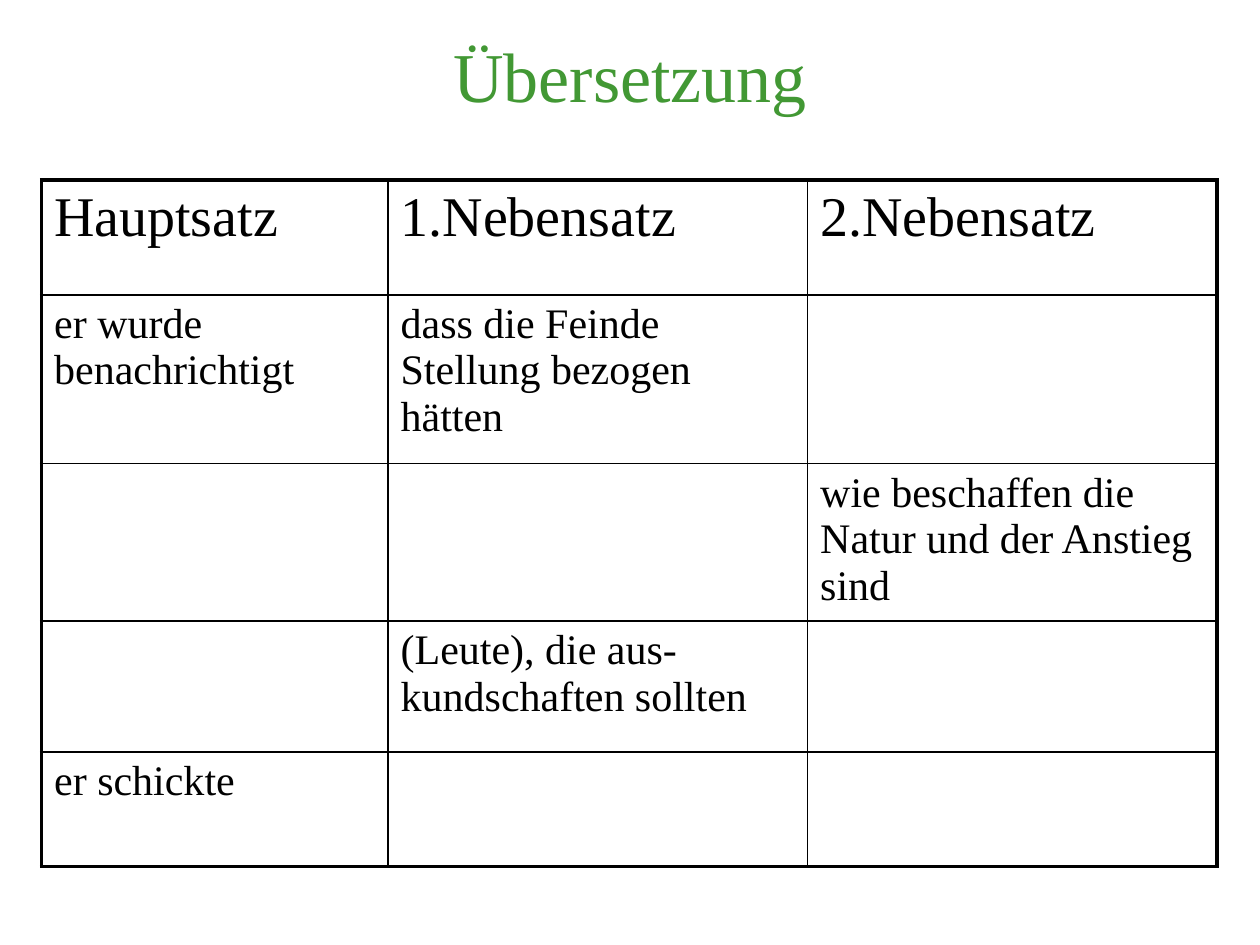
from dataclasses import dataclass

from lxml.etree import SubElement
from pptx import Presentation
from pptx.dml.color import RGBColor
from pptx.enum.text import MSO_ANCHOR, PP_ALIGN
from pptx.oxml.ns import qn
from pptx.util import Inches, Pt

FONT = "Times New Roman"
COLORS = {"title": "429834", "text": "000000", "border": "000000"}
OUTER_BORDER, INNER_BORDER = 2.25, 1
COLUMN_WIDTHS = [2.75, 3.33, 3.25]


@dataclass
class ClauseRow:
    height: float
    size: int
    texts: tuple[str, str, str]


ROWS = [
    ClauseRow(0.91, 32, ("Hauptsatz", "1.Nebensatz", "2.Nebensatz")),
    ClauseRow(1.34, 24, ("er wurde benachrichtigt", "dass die Feinde Stellung bezogen hätten", "")),
    ClauseRow(1.25, 24, ("", "", "wie beschaffen die Natur und der Anstieg sind")),
    ClauseRow(1.04, 24, ("", "(Leute), die aus-kundschaften sollten", "")),
    ClauseRow(0.91, 24, ("er schickte", "", "")),
]


def format_text(text_frame, size: int, color: str) -> None:
    for para in text_frame.paragraphs:
        for span in para.runs:
            span.font.name = FONT
            span.font.size = Pt(size)
            span.font.color.rgb = RGBColor.from_string(COLORS[color])


def add_borders(cell, outer_sides: dict[str, bool]) -> None:
    """Draw all four sides, thicker where a side lies on the table's edge."""
    properties = cell._tc.get_or_add_tcPr()
    for index, (side, is_outer) in enumerate(outer_sides.items()):
        width = OUTER_BORDER if is_outer else INNER_BORDER
        line = SubElement(properties, qn(f"a:ln{side}"), w=str(Pt(width)))
        fill = SubElement(line, qn("a:solidFill"))
        SubElement(fill, qn("a:srgbClr"), val=COLORS["border"])
        properties.insert(index, line)


def add_title(slide, text: str) -> None:
    title = slide.shapes.title
    title.left, title.top = Inches(0), Inches(0)
    title.width, title.height = Inches(10), Inches(1.18)
    title.text_frame.text = text
    title.text_frame.vertical_anchor = MSO_ANCHOR.MIDDLE
    title.text_frame.paragraphs[0].alignment = PP_ALIGN.CENTER
    format_text(title.text_frame, 40, "title")


def add_clause_table(slide, rows: list[ClauseRow]) -> None:
    height = sum(row.height for row in rows)
    frame = slide.shapes.add_table(
        len(rows), len(COLUMN_WIDTHS), Inches(0.33), Inches(1.43),
        Inches(sum(COLUMN_WIDTHS)), Inches(height))
    table = frame.table
    table.first_row = table.horz_banding = False
    for column, width in zip(table.columns, COLUMN_WIDTHS):
        column.width = Inches(width)
    for row_index, row in enumerate(rows):
        table.rows[row_index].height = Inches(row.height)
        for column_index, text in enumerate(row.texts):
            cell = table.cell(row_index, column_index)
            cell.fill.background()
            if text:
                cell.text_frame.text = text
                format_text(cell.text_frame, row.size, "text")
            add_borders(cell, {
                "L": column_index == 0,
                "R": column_index == len(COLUMN_WIDTHS) - 1,
                "T": row_index == 0,
                "B": row_index == len(rows) - 1,
            })


def main() -> None:
    deck = Presentation()
    deck.slide_width, deck.slide_height = Inches(10), Inches(7.5)
    slide = deck.slides.add_slide(deck.slide_layouts[5])
    add_title(slide, "Übersetzung")
    add_clause_table(slide, ROWS)
    deck.save("out.pptx")


if __name__ == "__main__":
    main()
